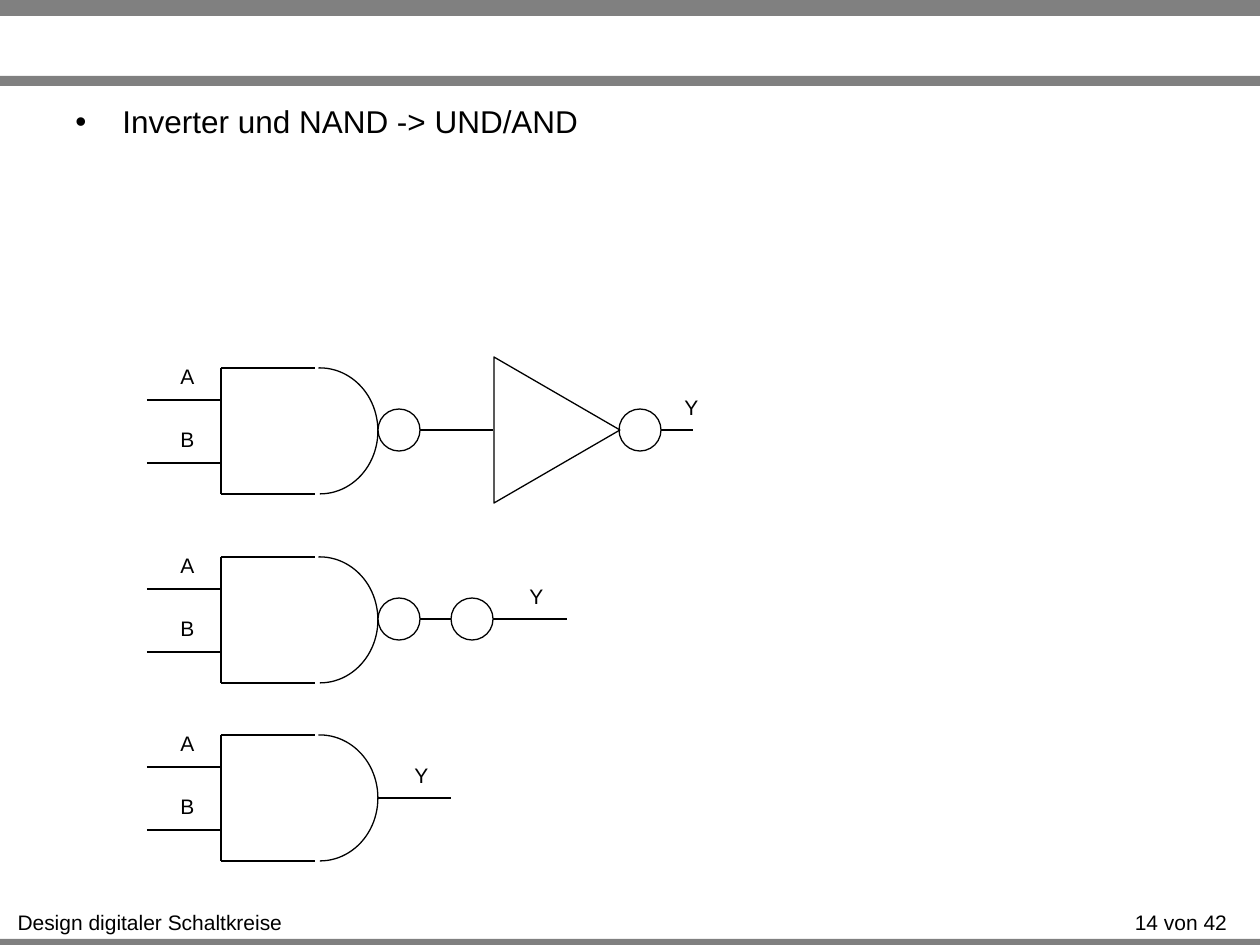
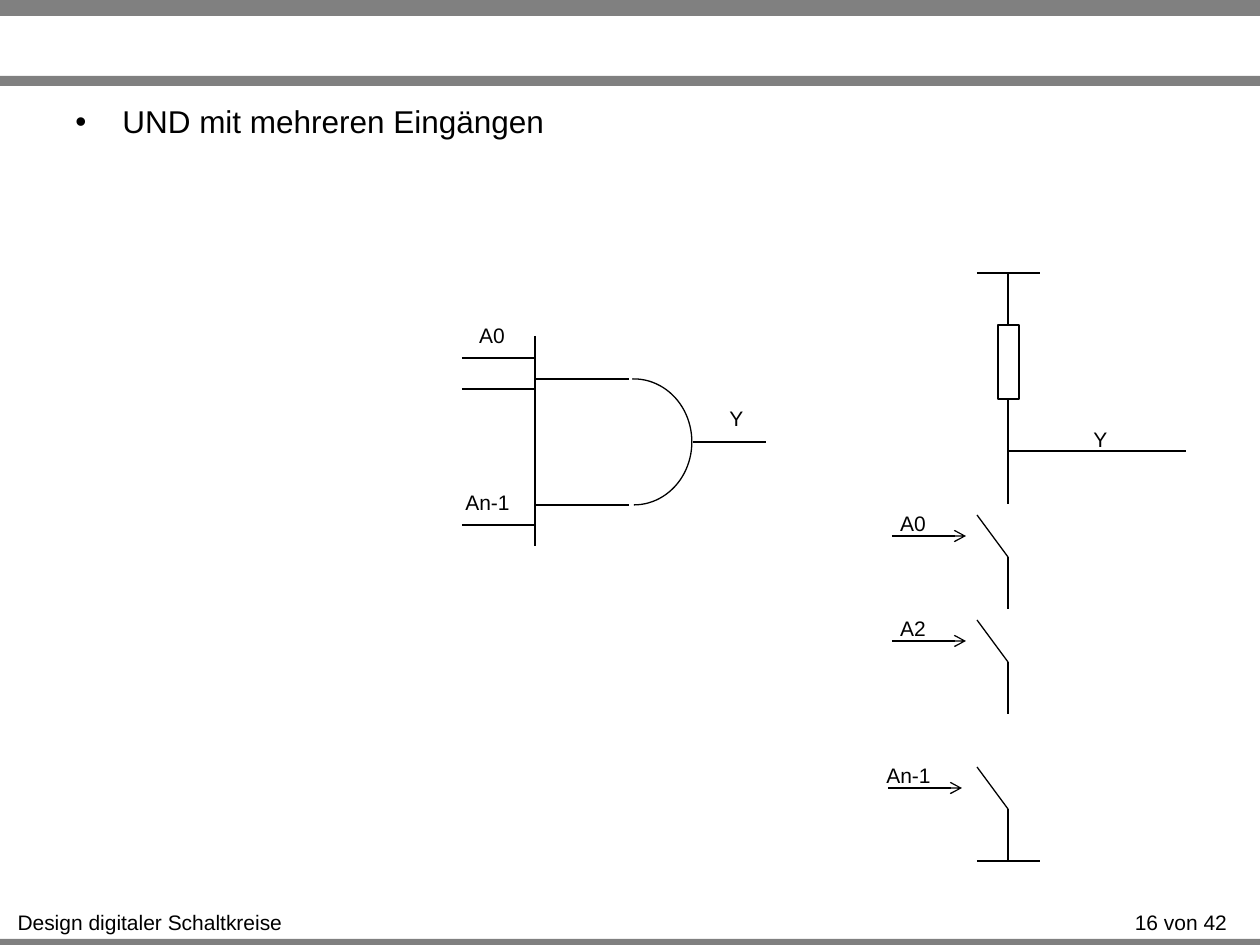
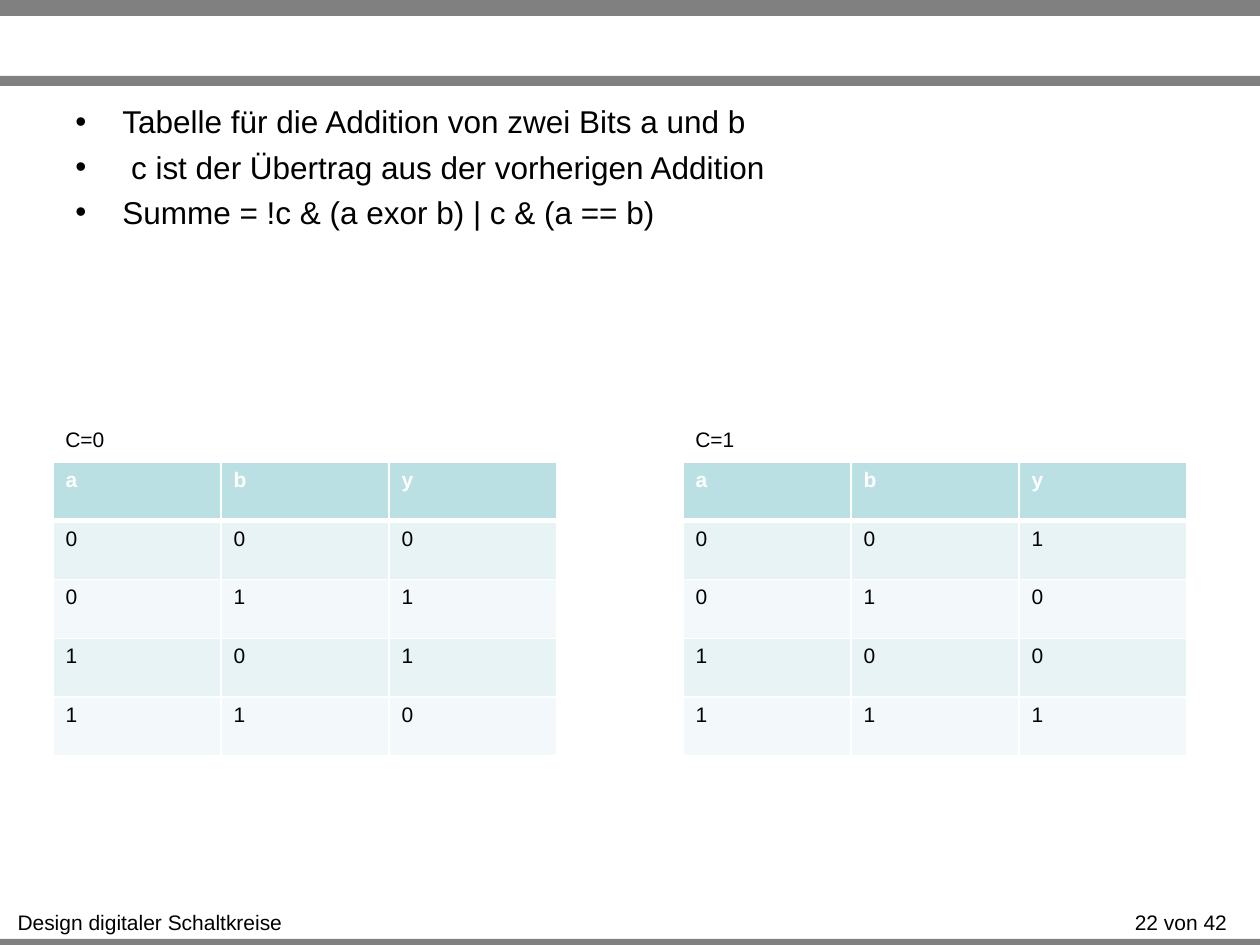
import dataclasses

import lxml.etree
import pptx
import pptx.dml.color
import pptx.enum.shapes
import pptx.enum.text
import pptx.oxml.ns
import pptx.util


@dataclasses.dataclass(frozen=True)
class Theme:
    font: str = "Arial"
    ink: str = "000000"
    paper: str = "FFFFFF"
    band: str = "808080"
    head: str = "BBE0E3"
    odd: str = "E7F3F4"
    even: str = "F3F9FA"
    body: int = 18
    small: int = 12
    line: float = 0.75


theme = Theme()
scale = 914400 / 126  # EMU per px
rgb = pptx.dml.color.RGBColor.from_string
qn = pptx.oxml.ns.qn
kinds = pptx.enum.shapes.MSO_SHAPE
align = pptx.enum.text.PP_ALIGN


def write(par, words, size=theme.small, color=theme.ink, bold=False):
    run = par.add_run()
    run.text = words
    run.font.name = theme.font
    run.font.size = pptx.util.Pt(size)
    run.font.bold = bold
    run.font.color.rgb = rgb(color)


def wire(page, x1, y1, x2, y2, arrow=False):
    straight = pptx.enum.shapes.MSO_CONNECTOR.STRAIGHT
    link = page.shapes.add_connector(straight, *(round(v * scale) for v in (x1, y1, x2, y2)))
    link.line.width = pptx.util.Pt(theme.line)
    link.line.color.rgb = rgb(theme.ink)
    props = link._element.spPr
    if arrow:
        lxml.etree.SubElement(props.find(qn("a:ln")), qn("a:tailEnd"), type="arrow")
    lxml.etree.SubElement(props, qn("a:effectLst"))


deck = pptx.Presentation()
deck.slide_width = round(1260 * scale)
deck.slide_height = round(945 * scale)

# Shared frame: bands, footer and bullet list
topics = [
    (14, ["Inverter und NAND -> UND/AND"]),
    (16, ["UND mit mehreren Eingängen"]),
    (22, ["Tabelle für die Addition von zwei Bits a und b",
          " c ist der Übertrag aus der vorherigen Addition",
          "Summe = !c & (a exor b) | c & (a == b)"]),
]
pages = []
tags = []  # page, x, y, width, words
for number, points in topics:
    page = deck.slides.add_slide(deck.slide_layouts[6])
    pages.append(page)
    for y, high in ((939, 10), (0, 16), (76, 10)):
        band = page.shapes.add_shape(
            kinds.RECTANGLE, 0, round(y * scale), deck.slide_width, round(high * scale))
        band.shadow.inherit = False
        band.fill.solid()
        band.fill.fore_color.rgb = rgb(theme.band)
        band.line.fill.background()
    tags += [(page, 4, 903, 292, "Design digitaler Schaltkreise"),
             (page, 1113, 903, 136, f"{number} von 42")]
    frame = page.shapes.add_textbox(*(round(v * scale) for v in (63, 96, 1134, 272))).text_frame
    frame.word_wrap = True
    for i, point in enumerate(points):
        par = frame.add_paragraph() if i else frame.paragraphs[0]
        if i:
            par.space_before = pptx.util.Pt(4.3)
        props = par._p.get_or_add_pPr()
        props.set("marL", str(round(47 * scale)))
        props.set("indent", str(round(-47 * scale)))
        lxml.etree.SubElement(props, qn("a:buFont"), typeface=theme.font)
        lxml.etree.SubElement(props, qn("a:buChar"), char="•")
        write(par, point, theme.body)

gates, multi, sums = pages

# AND bodies, and the two inputs of each plain gate
forms = []  # page, kind, x, y, width, height, turn, filled
for page, x, y in ((gates, 221, 368), (gates, 221, 557), (gates, 221, 735), (multi, 535, 379)):
    wire(page, x, y, x, y + 126)
    for edge in (y, y + 126):
        wire(page, x, edge, x + 94, edge)
    forms.append((page, kinds.ARC, x + 41, y, 116, 126, 0, False))
    if page is gates:
        for name, drop in (("A", 32), ("B", 95)):
            wire(page, x - 74, y + drop, x, y + drop)
            tags.append((page, x - 53, y + drop - 43, 39, name))

# Outputs, inverter bubbles and inverter
for x1, x2, y in ((420, 493, 430), (661, 693, 430), (420, 451, 619),
                  (493, 567, 619), (378, 451, 798)):
    wire(gates, x1, y, x2, y)
for x, y in ((378, 409), (619, 409), (378, 598), (451, 598)):
    forms.append((gates, kinds.OVAL, x, y, 42, 42, 0, True))
forms.append((gates, kinds.ISOSCELES_TRIANGLE, 484, 367, 146, 126, 90, False))
for x, y in ((672, 388), (517, 577), (402, 756)):
    tags.append((gates, x, y, 39, "Y"))

# Gate with many inputs
wire(multi, 535, 336, 535, 546)
wire(multi, 693, 442, 766, 442)
for y in (358, 389, 525):
    wire(multi, 462, y, 535, y)
tags += [(multi, 466, 316, 52, "A0"), (multi, 452, 483, 71, "An-1"), (multi, 717, 399, 39, "Y")]

# Switch chain with resistor between two rails
for y in (273, 861):
    wire(multi, 977, y, 1040, y)
for y1, y2 in ((273, 325), (399, 504)):
    wire(multi, 1008, y1, 1008, y2)
wire(multi, 1008, 451, 1186, 451)
forms.append((multi, kinds.RECTANGLE, 998, 325, 21, 74, 0, False))
tags.append((multi, 1081, 420, 39, "Y"))
for name, y, x, left, wide in (("A0", 515, 892, 887, 52), ("A2", 620, 892, 887, 52),
                               ("An-1", 767, 888, 873, 71)):
    wire(multi, 977, y, 1008, y + 42)
    wire(multi, 1008, y + 42, 1008, y + 94)
    wire(multi, x, y + 21, x + 74, y + 21, arrow=True)
    tags.append((multi, left, y - 11, wide, name))

# Outlined shapes
for page, kind, x, y, wide, high, turn, filled in forms:
    form = page.shapes.add_shape(kind, *(round(v * scale) for v in (x, y, wide, high)))
    form.shadow.inherit = False
    form.rotation = turn
    form.line.width = pptx.util.Pt(theme.line)
    form.line.color.rgb = rgb(theme.ink)
    if filled:
        form.fill.solid()
        form.fill.fore_color.rgb = rgb(theme.paper)
    else:
        form.fill.background()
    if kind == kinds.ARC:
        form.adjustments[0] = 161.1  # 268.5 degrees
        form.adjustments[1] = 54  # 90 degrees

# Truth tables for both carry values
truth = [
    (53, "C=0", ["aby", "000", "011", "101", "110"]),
    (683, "C=1", ["aby", "001", "010", "100", "111"]),
]
for x, name, rows in truth:
    tags.append((sums, x, 420, 64, name))
    grid = sums.shapes.add_table(
        len(rows), 3, *(round(v * scale) for v in (x, 462, 504, 294))).table
    for r, row in enumerate(rows):
        for c, value in enumerate(row):
            cell = grid.cell(r, c)
            props = cell._tc.get_or_add_tcPr()
            for side in ("L", "R", "T", "B"):
                thick = (r, side) in ((0, "B"), (1, "T"))
                edge = lxml.etree.SubElement(
                    props, qn("a:ln" + side), w=str(pptx.util.Pt(3 if thick else 1)))
                fill = lxml.etree.SubElement(edge, qn("a:solidFill"))
                lxml.etree.SubElement(fill, qn("a:srgbClr"), val=theme.paper)
            cell.fill.solid()
            cell.fill.fore_color.rgb = rgb(
                theme.head if r == 0 else theme.odd if r % 2 else theme.even)
            par = cell.text_frame.paragraphs[0]
            par.alignment = align.LEFT
            write(par, value, color=theme.ink if r else theme.paper, bold=r == 0)

# Labels
for page, x, y, wide, words in tags:
    frame = page.shapes.add_textbox(*(round(v * scale) for v in (x, y, wide, 38))).text_frame
    frame.word_wrap = False
    frame.auto_size = pptx.enum.text.MSO_AUTO_SIZE.SHAPE_TO_FIT_TEXT
    frame.paragraphs[0].alignment = align.CENTER
    write(frame.paragraphs[0], words)

deck.save("out.pptx")
